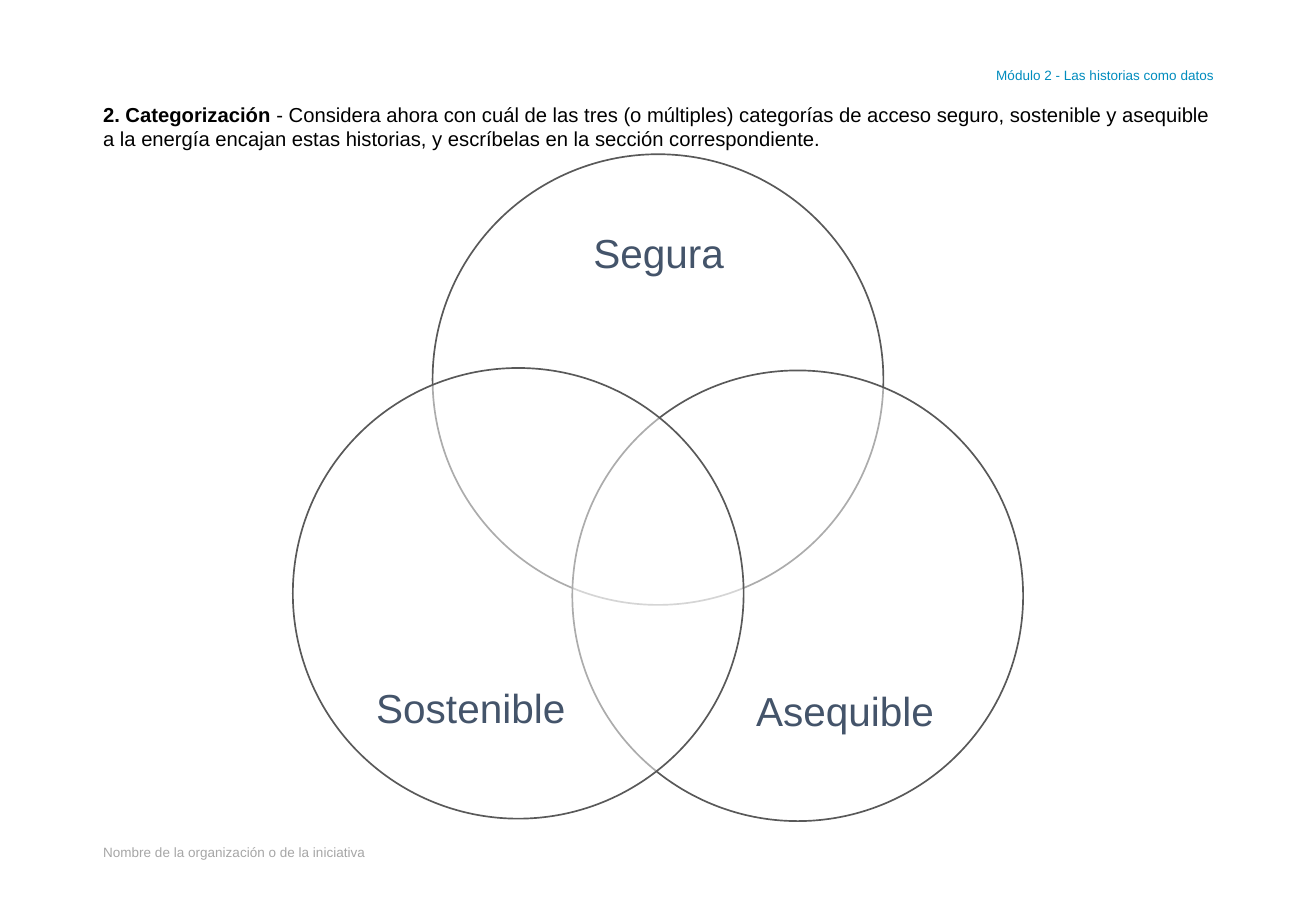
from lxml import etree
from pptx import Presentation
from pptx.dml.color import RGBColor
from pptx.enum.shapes import MSO_SHAPE as Shape
from pptx.enum.text import MSO_ANCHOR as Anchor, PP_ALIGN as Align
from pptx.oxml.ns import qn
from pptx.util import Emu, Pt

EMU_PER_PX = 9144  # 100 px to the inch
BLACK = RGBColor(0x00, 0x00, 0x00)
WHITE = RGBColor(0xFF, 0xFF, 0xFF)
GREY = RGBColor(0xA6, 0xA6, 0xA6)
BLUE = RGBColor(0x00, 0x8C, 0xBE)
SLATE = RGBColor(0x44, 0x54, 0x6A)
OUTLINE = RGBColor(0x59, 0x59, 0x59)


def px(value):
    return Emu(value * EMU_PER_PX)


class SlideBuilder:
    font_name = "Arial"

    def __init__(self, slide):
        self.slide = slide

    def text(self, box, runs, size, color, align=Align.LEFT,
             anchor=Anchor.TOP, margins=(10, 5, 10, 5), line_spacing=None):
        """Add a text box; runs are (text, bold) pairs."""
        shape = self.slide.shapes.add_textbox(*map(px, box))
        frame = shape.text_frame
        frame.word_wrap = True
        frame.vertical_anchor = anchor
        (frame.margin_left, frame.margin_top,
         frame.margin_right, frame.margin_bottom) = map(px, margins)
        paragraph = frame.paragraphs[0]
        paragraph.alignment = align
        paragraph.line_spacing = line_spacing
        for content, bold in runs:
            run = paragraph.add_run()
            run.text = content
            run.font.name = self.font_name
            run.font.size = Pt(size)
            run.font.bold = bold
            run.font.color.rgb = color

    def circle(self, left, top, diameter):
        """Add an outlined circle with a half-transparent white fill."""
        shape = self.slide.shapes.add_shape(
            Shape.OVAL, px(left), px(top), px(diameter), px(diameter))
        shape.shadow.inherit = False
        shape.fill.solid()
        shape.fill.fore_color.rgb = WHITE
        fill_color = shape.fill._xPr.find(qn("a:solidFill"))[0]
        etree.SubElement(fill_color, qn("a:alpha")).set("val", "50000")
        shape.line.color.rgb = OUTLINE
        shape.line.width = Pt(1)


def main():
    presentation = Presentation()
    presentation.slide_width = px(1083)
    presentation.slide_height = px(750)
    builder = SlideBuilder(
        presentation.slides.add_slide(presentation.slide_layouts[6]))

    # Footer and module header
    builder.text((75, 677, 301, 40),
                 [("Nombre de la organización o de la iniciativa", False)],
                 8, GREY, anchor=Anchor.BOTTOM, margins=(10, 5, 10, 9))
    builder.text((667, 50, 342, 24),
                 [("Módulo 2 - Las historias como datos", False)],
                 8, BLUE, Align.RIGHT, Anchor.BOTTOM, line_spacing=0.9)

    # Instruction
    builder.text((75, 75, 933, 58), [
        ("2. Categorización ", True),
        ("- Considera ahora con cuál de las tres (o múltiples) categorías de "
         "acceso seguro, sostenible y asequible a la energía encajan estas "
         "historias, y escríbelas en la sección correspondiente.", False),
    ], 12, BLACK, anchor=Anchor.MIDDLE)

    # Venn diagram, from back to front
    circles = [
        ("Segura", (356, 127), (406, 192, 272, 167), Anchor.TOP),
        ("Asequible", (471, 305), (584, 401, 223, 204), Anchor.BOTTOM),
        ("Sostenible", (241, 303), (276, 399, 223, 204), Anchor.BOTTOM),
    ]
    for label, corner, label_box, anchor in circles:
        builder.circle(*corner, 371)
        builder.text(label_box, [(label, False)], 24, SLATE, Align.CENTER,
                     anchor, margins=(0, 0, 0, 0), line_spacing=0.9)

    presentation.save("out.pptx")


if __name__ == "__main__":
    main()
